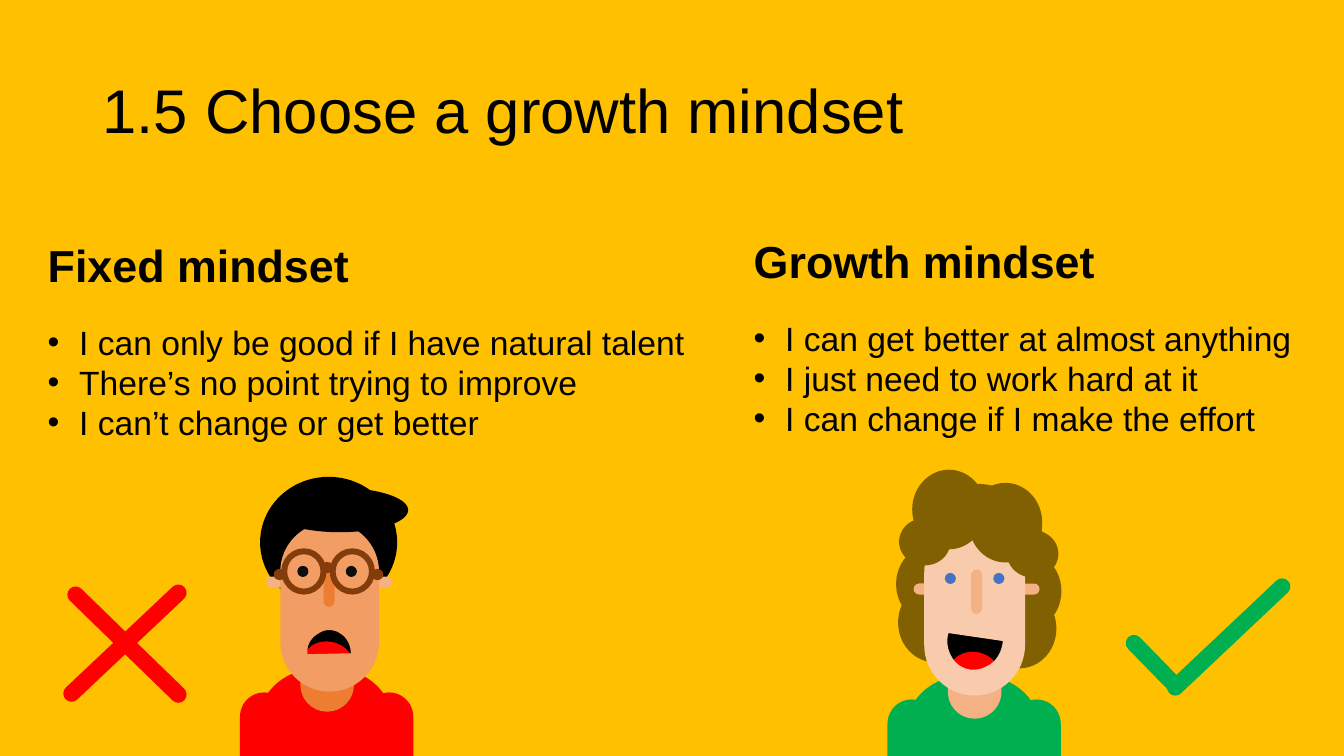
from dataclasses import dataclass

from lxml import etree
from pptx import Presentation
from pptx.dml.color import RGBColor
from pptx.enum.shapes import MSO_CONNECTOR, MSO_SHAPE
from pptx.enum.text import MSO_ANCHOR, MSO_AUTO_SIZE
from pptx.oxml.ns import qn
from pptx.shapes.autoshape import Shape
from pptx.shapes.shapetree import GroupShapes
from pptx.slide import Slide
from pptx.util import Pt

OVAL = MSO_SHAPE.OVAL
PILL = MSO_SHAPE.ROUNDED_RECTANGLE
STRAIGHT = MSO_CONNECTOR.STRAIGHT
MIDDLE = MSO_ANCHOR.MIDDLE
GROW = MSO_AUTO_SIZE.SHAPE_TO_FIT_TEXT

FONT = "Arial"
COLOURS = {
    "background": "FFC000", "black": "000000", "red": "FF0000", "green": "00B050",
    "brown": "806000", "peach": "F4B183", "pale": "F8CBAD", "tan": "F19D64",
    "orange": "ED7D31", "blue": "4472C4", "pupil": "0D0D0D", "frame": "843C0B",
}
Point = tuple[float, float]
# A contour starts at a point; two numbers add a line, six add a Bezier curve.
Contour = list[tuple[float, ...]]


@dataclass
class Part:
    left: float
    top: float
    width: float
    height: float
    colour: str
    kind: MSO_SHAPE = OVAL
    outline: float = 0


@dataclass
class Person:
    shift: Point
    tongue_shift: Point
    face: tuple[float, float, float, float]
    mouth: Contour
    hair: str
    skin: str
    neck: str
    eyes: str
    shirt: str
    behind: list[Part]
    front: list[Part]


@dataclass
class Stroke:
    start: Point
    end: Point
    colour: str


@dataclass
class Column:
    left: float
    top: float
    width: float
    heading: str
    bullets: list[str]


def curl(left: float, top: float, width: float = 52.6, height: float = 56.9) -> Part:
    return Part(left, top, width, height, "brown")


TONGUE = [(217.4, 483.1), (213.1, 473.8, 216.7, 463, 226.1, 459.4),
          (235.4, 455.8, 247, 460.1, 251.3, 468.7), (253.4, 473.8, 254.2, 478.8, 252, 483.1)]
FROWN = [(234.7, 450), (231.8, 450, 229, 451.4, 226.8, 452.9),
         (221.8, 455.8, 218.9, 461.5, 219.6, 467.3), (250.6, 466.6),
         (250.6, 460.8, 247.7, 455, 242.6, 452.2), (240.5, 450.7, 237.6, 450, 234.7, 450)]
SMILE = [(677.5, 452.2), (675.4, 459.4, 677.5, 467.3, 682.6, 473),
         (688.3, 478.8, 697, 480.2, 704.9, 475.9), (711.4, 473, 715.7, 465.8, 716.4, 457.9)]

GLASSES = [Part(left, 393.8, 28.1, 28.8, "frame", OVAL, 4.25) for left in (203, 237.6)]
GLASSES += [Part(left, top, 8.6, 7.9, "frame", PILL)
            for left, top in ((265.3, 406.4), (195.5, 406.4), (229.3, 401.4))]
GROWTH_PERSON = Person(
    (462.5, 5), (461.6, 7.4), (660.2, 373, 72, 123.8), SMILE,
    "brown", "pale", "peach", "blue", "green",
    [curl(702, 420.5), curl(641.5, 416.2), curl(640.1, 388.8), curl(705.6, 393.8)],
    [curl(642.2, 370.1, 36.7, 33.8), curl(719.3, 378.7, 36.7, 33.8),
     curl(651.6, 335.5), curl(691.9, 344.9)])
FIXED_PERSON = Person(
    (0, 0), (0, 0), (200.2, 373, 70.5, 121), FROWN,
    "black", "tan", "orange", "pupil", "red",
    [], [Part(193.7, 348.5, 97.9, 31.7, "black"), *GLASSES])

STROKES = [
    Stroke((54, 424.8), (127.4, 496.1), "red"),
    Stroke((51.1, 495.4), (127.4, 423.4), "red"),
    Stroke((810, 459.4), (839.5, 489.6), "green"),
    Stroke((839.5, 491), (915.8, 419), "green"),
]
COLUMNS = [
    Column(534.8, 163.4, 393.8, "Growth mindset", [
        "I can get better at almost anything", "I just need to work hard at it",
        "I can change if I make the effort"]),
    Column(30.5, 166.3, 477.4, "Fixed mindset", [
        "I can only be good if I have natural talent", "There’s no point trying to improve",
        "I can’t change or get better"]),
]


def colour_of(name: str) -> RGBColor:
    return RGBColor.from_string(COLOURS[name])


def paint(shape: Shape, colour: str) -> None:
    shape.shadow.inherit = False
    shape.fill.solid()
    shape.fill.fore_color.rgb = colour_of(colour)
    shape.line.fill.background()


def draw_part(shapes: GroupShapes, part: Part, shift: Point = (0, 0)) -> None:
    shape = shapes.add_shape(part.kind, Pt(part.left + shift[0]), Pt(part.top + shift[1]),
                             Pt(part.width), Pt(part.height))
    paint(shape, part.colour)
    if part.kind == PILL:
        shape.adjustments[0] = 0.5
    if part.outline:
        shape.fill.background()
        shape.line.color.rgb = colour_of(part.colour)
        shape.line.width = Pt(part.outline)


def face_outline(left: float, top: float, width: float, height: float) -> Contour:
    """Return an upright pill: two half circles joined by straight sides."""
    radius, pull = width / 2, width / 2 * 0.45
    right, bottom, middle = left + width, top + height, left + radius
    upper, lower = top + radius, bottom - radius
    return [(middle, top),
            (right - pull, top, right, top + pull, right, upper), (right, lower),
            (right, bottom - pull, right - pull, bottom, middle, bottom),
            (left + pull, bottom, left, bottom - pull, left, lower), (left, upper),
            (left, top + pull, left + pull, top, middle, top)]


def draw_outline(shapes: GroupShapes, contours: list[Contour], colour: str,
                 shift: Point = (0, 0)) -> None:
    """Fill the contours as one shape; an inner contour becomes a hole."""
    builder = None
    for contour in contours:
        numbers = [number for segment in contour for number in segment]
        points = [(Pt(x + shift[0]), Pt(y + shift[1]))
                  for x, y in zip(numbers[::2], numbers[1::2])]
        if builder is None:
            builder = shapes.build_freeform(*points[0])
        else:
            builder.move_to(*points[0])
        builder.add_line_segments(points[1:])
    shape = builder.convert_to_shape()
    paint(shape, colour)
    lines = iter(list(shape._element.iter(qn("a:lnTo"))))
    for segment in (segment for contour in contours for segment in contour[1:]):
        steps = [next(lines) for _ in range(len(segment) // 2)]
        if len(steps) == 3:
            curve = etree.Element(qn("a:cubicBezTo"))
            steps[0].addprevious(curve)
            for step in steps:
                curve.append(step[0])
                step.getparent().remove(step)


def draw_person(page: Slide, person: Person) -> None:
    shapes = page.shapes.add_group_shape().shapes
    below_face = [
        Part(185.8, 340.6, 97.9, 93.6, person.hair),
        Part(190.1, 411.8, 90, 7.9, "peach", PILL),
        Part(183.6, 478.1, 97.9, 82.1, person.shirt, PILL),
        Part(214.6, 442.8, 38.2, 65.5, person.neck, PILL),
        Part(206.6, 434.9, 54.7, 54, "black"),
    ]
    above_face = [
        Part(231.1, 401.8, 7.9, 31.7, person.neck, PILL),
        *(Part(left, 404.2, 7.9, 7.9, person.eyes, PILL) for left in (212.4, 247)),
        *(Part(left, 494.6, 34.6, 65.5, person.shirt, PILL) for left in (171.4, 260.6)),
    ]
    for part in person.behind:
        draw_part(shapes, part)
    for part in below_face:
        draw_part(shapes, part, person.shift)
    draw_outline(shapes, [TONGUE], "red", person.tongue_shift)
    draw_outline(shapes, [person.mouth, face_outline(*person.face)], person.skin)
    for part in above_face:
        draw_part(shapes, part, person.shift)
    for part in person.front:
        draw_part(shapes, part)


def draw_stroke(page: Slide, stroke: Stroke) -> None:
    line = page.shapes.add_connector(STRAIGHT, *map(Pt, stroke.start + stroke.end))
    line.line.color.rgb = colour_of(stroke.colour)
    line.line.width = Pt(11.75)
    line.line._get_or_add_ln().set("cap", "rnd")
    etree.SubElement(line._element.spPr, qn("a:effectLst"))


def style(para, size: float, bold: bool = False) -> None:
    para.font.name, para.font.size, para.font.bold = FONT, Pt(size), bold
    para.font.color.rgb = colour_of("black")


def add_title(page: Slide, text: str) -> None:
    frame = page.shapes.add_textbox(Pt(66.2), Pt(28.8), Pt(828), Pt(104.4)).text_frame
    frame.word_wrap, frame.vertical_anchor = True, MIDDLE
    para = frame.paragraphs[0]
    para.text, para.line_spacing = text, 0.9
    style(para, 44)


def add_column(page: Slide, column: Column) -> None:
    box = page.shapes.add_textbox(Pt(column.left), Pt(column.top), Pt(column.width), Pt(154.8))
    frame = box.text_frame
    frame.word_wrap, frame.auto_size = True, GROW
    frame.margin_left = frame.margin_right = frame.margin_top = frame.margin_bottom = Pt(3.6)
    heading = frame.paragraphs[0]
    heading.text, heading.space_after = column.heading, Pt(21.4)
    style(heading, 32, True)
    for bullet in column.bullets:
        para = frame.add_paragraph()
        para.text = bullet
        style(para, 24)
        properties = para._p.get_or_add_pPr()
        properties.set("marL", str(Pt(22.5)))
        properties.set("indent", str(-Pt(22.5)))
        defaults = properties.find(qn("a:defRPr"))
        defaults.addprevious(etree.Element(qn("a:buFont"), typeface=FONT))
        defaults.addprevious(etree.Element(qn("a:buChar"), char="•"))


def main() -> None:
    deck = Presentation()
    deck.slide_width, deck.slide_height = Pt(960), Pt(540)
    page = deck.slides.add_slide(deck.slide_layouts[6])
    page.background.fill.solid()
    page.background.fill.fore_color.rgb = colour_of("background")
    add_title(page, "1.5 Choose a growth mindset")
    draw_person(page, GROWTH_PERSON)
    for column in COLUMNS:
        add_column(page, column)
    for stroke in STROKES:
        draw_stroke(page, stroke)
    draw_person(page, FIXED_PERSON)
    deck.save("out.pptx")


if __name__ == "__main__":
    main()
